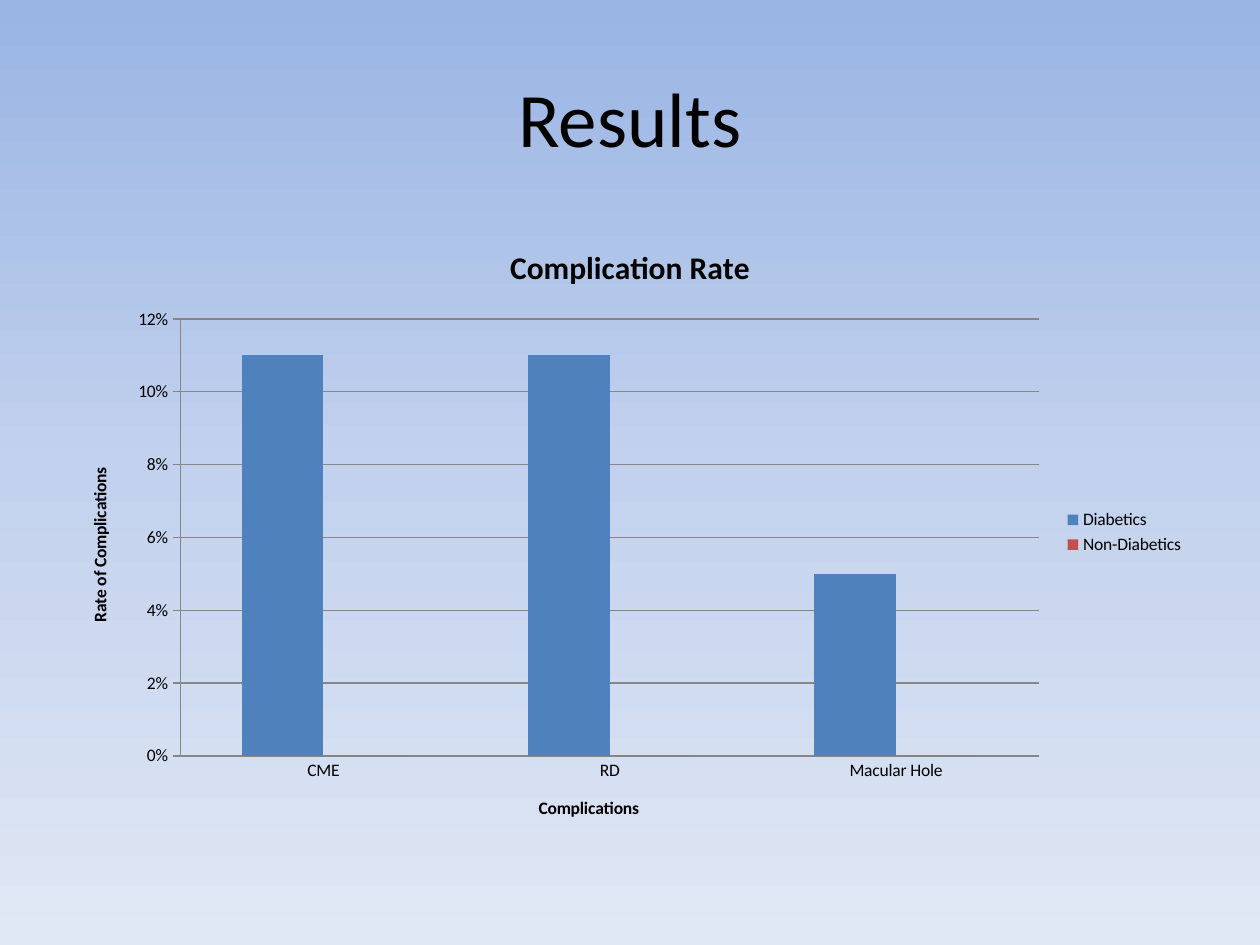
from copy import deepcopy

from pptx import Presentation, util as u
from pptx.chart.data import CategoryChartData
from pptx.dml.color import RGBColor
from pptx.enum import chart as ch, text

COLORS = {"text": "000000", "line": "868686",
          "Diabetics": "4F81BD", "Non-Diabetics": "C0504D"}
BACKGROUND = [(0, "9AB5E4"), (0.5, "C2D1ED"), (1, "E1E8F5")]
CATEGORIES = ["CME", "RD", "Macular Hole"]
RATES = {"Diabetics": [0.11, 0.11, 0.05], "Non-Diabetics": [0, 0, 0]}


class Deck:
    font = "Calibri"

    def __init__(self, width, height):
        self.prs = Presentation()
        self.prs.slide_width, self.prs.slide_height = u.Inches(width), u.Inches(height)
        self.s = self.prs.slides.add_slide(self.prs.slide_layouts[5])

    def box(self, left, top, width, height):
        """Turn shares of the slide's size into lengths."""
        w, h = self.prs.slide_width, self.prs.slide_height
        return [round(v) for v in (left * w, top * h, width * w, height * h)]

    def style(self, font, size, bold=False):
        font.name, font.size, font.bold = self.font, u.Pt(size), bold
        font.color.rgb = RGBColor.from_string(COLORS["text"])

    def background(self, stops):
        fill = self.s.background.fill
        fill.gradient()
        fill.gradient_angle = 270
        stop_list = self.s.element.xpath(".//a:gsLst")[0]
        while len(stop_list) < len(stops):
            stop_list.append(deepcopy(stop_list[-1]))
        for stop, (position, color) in zip(fill.gradient_stops, stops):
            stop.position = position
            stop.color.rgb = RGBColor.from_string(color)

    def title(self, words, *share):
        sp = self.s.shapes.title
        sp.left, sp.top, sp.width, sp.height = self.box(*share)
        tf = sp.text_frame
        tf.text = words
        tf.vertical_anchor = text.MSO_ANCHOR.MIDDLE
        p = tf.paragraphs[0]
        p.alignment = text.PP_ALIGN.CENTER
        self.style(p.font, 44)

    def caption(self, owner, words, size):
        """Give a chart or an axis a bold title."""
        owner.has_title = True
        tf = (owner.chart_title if hasattr(owner, "chart_title") else owner.axis_title).text_frame
        tf.text = words
        self.style(tf.paragraphs[0].font, size, bold=True)

    def line(self, fmt):
        fmt.line.color.rgb = RGBColor.from_string(COLORS["line"])
        fmt.line.width = u.Pt(0.75)

    def columns(self, heading, x_title, y_title, *share):
        data = CategoryChartData(number_format="0%")
        data.categories = CATEGORIES
        for name, values in RATES.items():
            data.add_series(name, values)
        chart = self.s.shapes.add_chart(
            ch.XL_CHART_TYPE.COLUMN_CLUSTERED, *self.box(*share), data).chart
        self.style(chart.font, 10)
        self.caption(chart, heading, 18)

        x, y = chart.category_axis, chart.value_axis
        for axis, words, tick in ((x, x_title, ch.XL_TICK_MARK.NONE),
                                  (y, y_title, ch.XL_TICK_MARK.CROSS)):
            self.caption(axis, words, 10)
            axis.major_tick_mark = tick
            axis.minor_tick_mark = ch.XL_TICK_MARK.NONE
            self.line(axis.format)
        y.minimum_scale, y.maximum_scale, y.major_unit = 0, 0.12, 0.02
        y.tick_labels.number_format = "0%"
        y.tick_labels.number_format_is_linked = False
        y.has_major_gridlines = True
        self.line(y.major_gridlines.format)

        chart.has_legend = True
        chart.legend.position = ch.XL_LEGEND_POSITION.RIGHT
        chart.legend.include_in_layout = False
        plot = chart.plots[0]
        plot.vary_by_categories = False
        plot.gap_width, plot.overlap = 150, 0
        for series in plot.series:
            series.format.fill.solid()
            series.format.fill.fore_color.rgb = RGBColor.from_string(COLORS[series.name])


def main():
    deck = Deck(10, 7.5)
    deck.background(BACKGROUND)
    deck.title("Results", 0.05, 0.04, 0.9, 1 / 6)
    deck.columns("Complication Rate", "Complications", "Rate of Complications",
                 0.05, 7 / 30, 0.9, 0.66)
    deck.prs.save("out.pptx")


if __name__ == "__main__":
    main()
